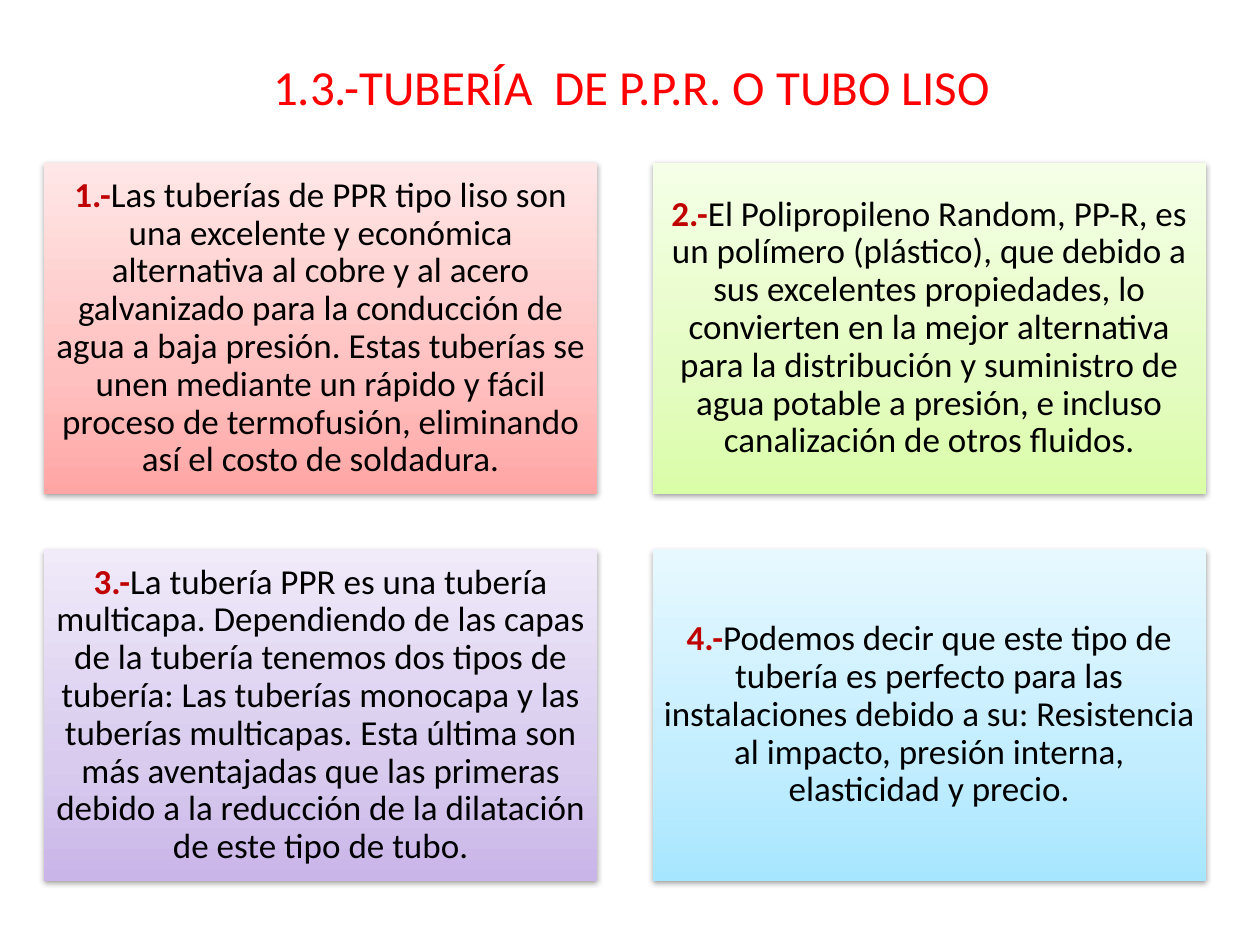
from dataclasses import dataclass

import pptx
import pptx.dml.color
import pptx.enum.shapes
import pptx.enum.text
import pptx.oxml
import pptx.oxml.ns
import pptx.util
from pptx.util import Inches

FONT = "Calibri"
COLORS = {
    "title": "FF0000",
    "number": "C00000",
    "text": "000000",
    "shadow": "000000",
}
GRADIENTS = {
    "red": ("FFA6A5", "FFC0BF", "FFE7E7"),
    "green": ("DAFDA7", "E4FCC2", "F5FFE7"),
    "purple": ("C9B5E8", "D8CBEE", "F0EAF9"),
    "blue": ("A7E6FF", "C1EDFF", "E7F8FF"),
}
STOPS = (0, 35, 100)

COLUMNS = 2
CARD_LEFT, CARD_TOP = 0.35, 1.29
CARD_WIDTH, CARD_HEIGHT = 4.39, 2.63
CARD_GAP = 0.44
CARD_INSET = 0.08


@dataclass
class Card:
    gradient: str
    text: str


CARDS = [
    Card("red", "Las tuberías de PPR tipo liso son una excelente y económica "
         "alternativa al cobre y al acero galvanizado para la conducción de agua "
         "a baja presión. Estas tuberías se unen mediante un rápido y fácil "
         "proceso de termofusión, eliminando así el costo de soldadura."),
    Card("green", "El Polipropileno Random, PP-R, es un polímero (plástico), que "
         "debido a sus excelentes propiedades, lo convierten en la mejor "
         "alternativa para la distribución y suministro de agua potable a "
         "presión, e incluso canalización de otros fluidos."),
    Card("purple", "La tubería PPR es una tubería multicapa. Dependiendo de las "
         "capas de la tubería tenemos dos tipos de tubería: Las tuberías monocapa "
         "y las tuberías multicapas. Esta última son más aventajadas que las "
         "primeras debido a la reducción de la dilatación de este tipo de tubo."),
    Card("blue", "Podemos decir que este tipo de tubería es perfecto para las "
         "instalaciones debido a su: Resistencia al impacto, presión interna, "
         "elasticidad y precio."),
]


def rgb(name: str) -> pptx.dml.color.RGBColor:
    return pptx.dml.color.RGBColor.from_string(COLORS[name])


def prepare_paragraph(shape, size: int):
    """Centre the shape's text both ways and return its first paragraph."""
    frame = shape.text_frame
    frame.word_wrap = True
    frame.vertical_anchor = pptx.enum.text.MSO_ANCHOR.MIDDLE
    para = frame.paragraphs[0]
    para.alignment = pptx.enum.text.PP_ALIGN.CENTER
    para.font.name = FONT
    para.font.size = pptx.util.Pt(size)
    return para


def add_gradient_and_shadow(shape, colors: tuple[str, ...]) -> None:
    """Fill from bottom to top through three stops and cast a soft shadow down."""
    namespace = pptx.oxml.ns.nsdecls("a")
    stops = "".join(
        f'<a:gs pos="{position * 1000}"><a:srgbClr val="{color}"/></a:gs>'
        for position, color in zip(STOPS, colors)
    )
    gradient = pptx.oxml.parse_xml(
        f'<a:gradFill {namespace} rotWithShape="1"><a:gsLst>{stops}</a:gsLst>'
        '<a:lin ang="16200000" scaled="1"/></a:gradFill>'
    )
    shadow = pptx.oxml.parse_xml(
        f'<a:effectLst {namespace}><a:outerShdw blurRad="{pptx.util.Pt(3.1)}" '
        f'dist="{pptx.util.Pt(1.6)}" dir="5400000" rotWithShape="0">'
        f'<a:srgbClr val="{COLORS["shadow"]}"><a:alpha val="38000"/></a:srgbClr>'
        '</a:outerShdw></a:effectLst>'
    )
    shape.line.fill.background()
    properties = shape.element.spPr
    properties.find(pptx.oxml.ns.qn("a:prstGeom")).addnext(gradient)
    properties.append(shadow)


def add_title(slide, text: str) -> None:
    box = slide.shapes.add_textbox(Inches(0.51), Inches(0.29), Inches(9), Inches(0.79))
    para = prepare_paragraph(box, 28)
    para.text = text
    para.font.color.rgb = rgb("title")


def add_card(slide, index: int, card: Card) -> None:
    row, column = divmod(index, COLUMNS)
    box = slide.shapes.add_shape(
        pptx.enum.shapes.MSO_SHAPE.RECTANGLE,
        Inches(CARD_LEFT + column * (CARD_WIDTH + CARD_GAP)),
        Inches(CARD_TOP + row * (CARD_HEIGHT + CARD_GAP)),
        Inches(CARD_WIDTH),
        Inches(CARD_HEIGHT),
    )
    add_gradient_and_shadow(box, GRADIENTS[card.gradient])
    frame = box.text_frame
    frame.margin_left = frame.margin_right = Inches(CARD_INSET)
    frame.margin_top = frame.margin_bottom = Inches(CARD_INSET)

    para = prepare_paragraph(box, 20)
    para.line_spacing = 0.9
    number = para.add_run()
    number.text = f"{index + 1}.-"
    number.font.bold = True
    number.font.color.rgb = rgb("number")
    body = para.add_run()
    body.text = card.text
    body.font.color.rgb = rgb("text")


def main() -> None:
    deck = pptx.Presentation()
    deck.slide_width, deck.slide_height = Inches(10), Inches(7.5)
    slide = deck.slides.add_slide(deck.slide_layouts[6])
    add_title(slide, "1.3.-TUBERÍA  DE P.P.R. O TUBO LISO")
    for index, card in enumerate(CARDS):
        add_card(slide, index, card)
    deck.save("out.pptx")


if __name__ == "__main__":
    main()
